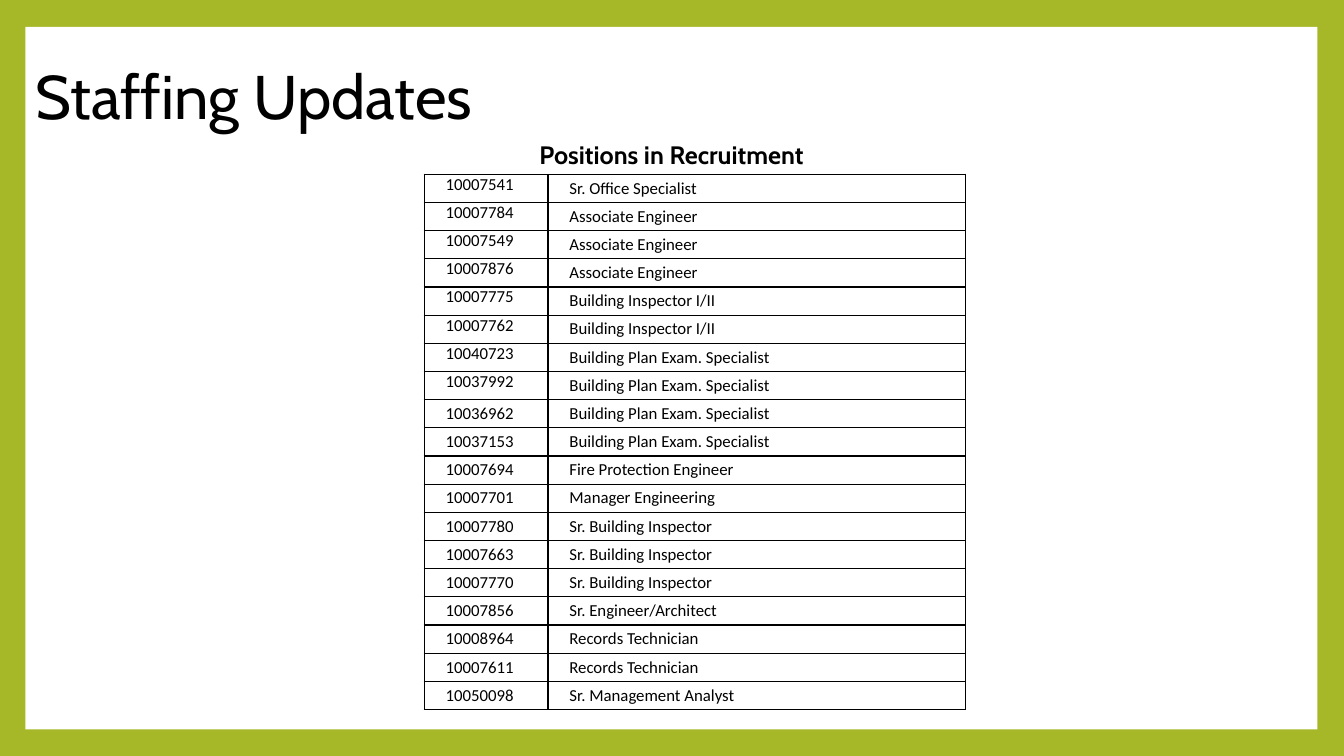
from lxml import etree
from pptx import Presentation
from pptx.dml.color import RGBColor
from pptx.enum.shapes import MSO_SHAPE
from pptx.enum.text import MSO_ANCHOR, PP_ALIGN
from pptx.oxml.ns import qn
from pptx.util import Cm, Pt

RECTANGLE = MSO_SHAPE.RECTANGLE
TOP, MIDDLE = MSO_ANCHOR.TOP, MSO_ANCHOR.MIDDLE
LEFT, CENTER = PP_ALIGN.LEFT, PP_ALIGN.CENTER

GREEN = RGBColor(0xA6, 0xB7, 0x27)
WHITE = RGBColor(0xFF, 0xFF, 0xFF)
BLACK = RGBColor(0x00, 0x00, 0x00)

# Content
TITLE = "Staffing Updates"
TABLE_HEADING = "Positions in Recruitment"
POSITIONS = [
    ("10007541", "Sr. Office Specialist"),
    ("10007784", "Associate Engineer"),
    ("10007549", "Associate Engineer"),
    ("10007876", "Associate Engineer"),
    ("10007775", "Building Inspector I/II"),
    ("10007762", "Building Inspector I/II"),
    ("10040723", "Building Plan Exam. Specialist"),
    ("10037992", "Building Plan Exam. Specialist"),
    ("10036962", "Building Plan Exam. Specialist"),
    ("10037153", "Building Plan Exam. Specialist"),
    ("10007694", "Fire Protection Engineer"),
    ("10007701", "Manager Engineering"),
    ("10007780", "Sr. Building Inspector"),
    ("10007663", "Sr. Building Inspector"),
    ("10007770", "Sr. Building Inspector"),
    ("10007856", "Sr. Engineer/Architect"),
    ("10008964", "Records Technician"),
    ("10007611", "Records Technician"),
    ("10050098", "Sr. Management Analyst"),
]
TOP_ANCHORED_NUMBERS = 8  # the first numbers sit at the top of their cells

# Table measures
COLUMN_WIDTHS = (Cm(3.12), Cm(10.52))
ROW_HEIGHT = Cm(0.71)
CELL_MARGIN = Cm(0.18)
FIRST_LINE_INDENT = Cm(0.36)
BORDER_WIDTH = Pt(1)


def format_paragraph(paragraph, text, font_name, size, alignment=LEFT, bold=False):
    paragraph.text = text
    paragraph.alignment = alignment
    font = paragraph.font
    font.name, font.size, font.bold = font_name, Pt(size), bold
    font.color.rgb = BLACK


def add_borders(cell):
    properties = cell._tc.get_or_add_tcPr()
    for side in ("a:lnL", "a:lnR", "a:lnT", "a:lnB"):
        line = etree.SubElement(properties, qn(side), w=str(BORDER_WIDTH))
        fill = etree.SubElement(line, qn("a:solidFill"))
        etree.SubElement(fill, qn("a:srgbClr"), val=str(BLACK))


def fill_cell(cell, text, anchor):
    cell.margin_left = cell.margin_right = CELL_MARGIN
    cell.margin_top = cell.margin_bottom = 0
    cell.vertical_anchor = anchor
    add_borders(cell)
    cell.fill.background()
    paragraph = cell.text_frame.paragraphs[0]
    format_paragraph(paragraph, text, "Calibri", 12)
    paragraph_properties = paragraph._p.get_or_add_pPr()
    paragraph_properties.set("marL", "0")
    paragraph_properties.set("indent", str(FIRST_LINE_INDENT))


def main():
    presentation = Presentation()
    presentation.slide_width, presentation.slide_height = Cm(33.87), Cm(19.05)
    slide = presentation.slides.add_slide(presentation.slide_layouts[5])

    # Green frame: coloured background with a white panel behind the title
    slide.background.fill.solid()
    slide.background.fill.fore_color.rgb = GREEN
    panel = slide.shapes.add_shape(RECTANGLE, Cm(0.64), Cm(0.68), Cm(32.56), Cm(17.7))
    panel.shadow.inherit = False
    panel.fill.solid()
    panel.fill.fore_color.rgb = WHITE
    panel.line.fill.background()
    title = slide.shapes.title
    title.element.addprevious(panel.element)

    # Title
    title.left, title.top, title.width, title.height = Cm(0.64), Cm(0.64), Cm(27.43), Cm(3.76)
    title.text_frame.vertical_anchor = MIDDLE
    format_paragraph(title.text_frame.paragraphs[0], TITLE, "Cabin", 44)
    title.text_frame.paragraphs[0].line_spacing = 0.9

    # Table heading
    heading = slide.shapes.add_textbox(Cm(13.18), Cm(3.38), Cm(7.49), Cm(1.02))
    heading.text_frame.word_wrap = True
    format_paragraph(heading.text_frame.paragraphs[0], TABLE_HEADING, "Cabin", 18, CENTER, True)

    # Table of positions
    table = slide.shapes.add_table(
        len(POSITIONS), len(COLUMN_WIDTHS), Cm(10.69), Cm(4.39),
        sum(COLUMN_WIDTHS), ROW_HEIGHT * len(POSITIONS)).table
    table.first_row = table.horz_banding = False
    for column, width in zip(table.columns, COLUMN_WIDTHS):
        column.width = width
    for index, (number, position) in enumerate(POSITIONS):
        table.rows[index].height = ROW_HEIGHT
        number_anchor = TOP if index < TOP_ANCHORED_NUMBERS else MIDDLE
        fill_cell(table.cell(index, 0), number, number_anchor)
        fill_cell(table.cell(index, 1), position, MIDDLE)

    presentation.save("out.pptx")


if __name__ == "__main__":
    main()
